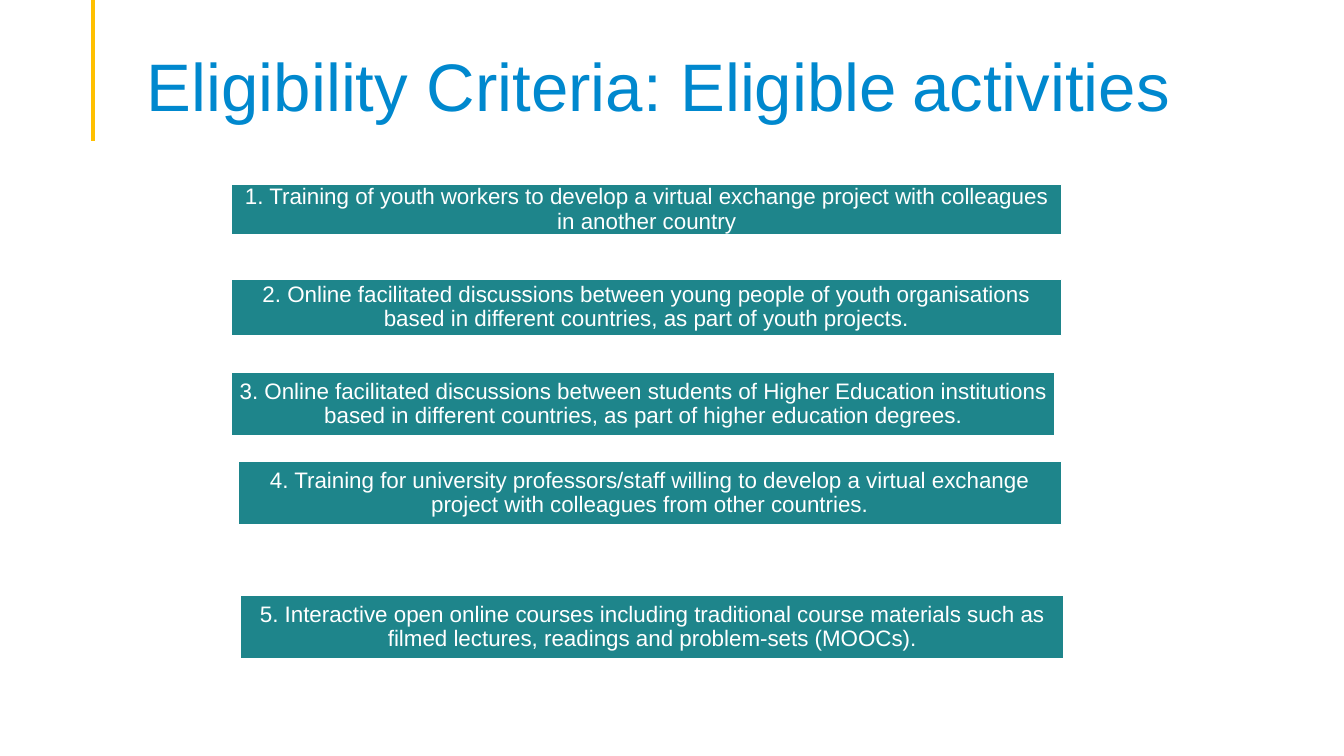
from dataclasses import dataclass

from lxml.etree import SubElement
from pptx import Presentation
from pptx.dml.color import RGBColor
from pptx.enum.shapes import MSO_CONNECTOR, MSO_SHAPE
from pptx.enum.text import MSO_ANCHOR, MSO_AUTO_SIZE, PP_ALIGN
from pptx.oxml.ns import qn
from pptx.slide import Slide
from pptx.util import Pt


@dataclass(frozen=True)
class Theme:
    font: str = "Arial"
    title_color: RGBColor = RGBColor(0x00, 0x88, 0xCE)
    space_color: RGBColor = RGBColor(0x40, 0x40, 0x40)
    accent: RGBColor = RGBColor(0xFF, 0xC0, 0x00)
    box_fill: RGBColor = RGBColor(0x1E, 0x85, 0x8B)
    white: RGBColor = RGBColor(0xFF, 0xFF, 0xFF)
    title_size: float = 48
    space_size: float = 37.3
    body_size: float = 16


@dataclass(frozen=True)
class Activity:
    text: str
    left: float
    top: float
    width: float = 588.2
    height: float = 45.2


THEME = Theme()

TITLE_RUNS = [
    ("Eligibility Criteria: Eligible", THEME.title_size, THEME.title_color),
    (" ", THEME.space_size, THEME.space_color),
    ("activities", THEME.title_size, THEME.title_color),
]

ACTIVITIES = [
    Activity("Training of youth workers to develop a virtual exchange project "
             "with colleagues in another country", 165.6, 131.8, 592.6, 36),
    Activity("Online facilitated discussions between young people of youth organisations "
             "based in different countries, as part of youth projects.",
             165, 199.5, 593.3, 40.3),
    Activity("Online facilitated discussions between students of Higher Education institutions "
             "based in different countries, as part of higher education degrees.", 165.4, 266.2),
    Activity("Training for university professors/staff willing to develop a virtual exchange "
             "project with colleagues from other countries.", 170, 329.6),
    Activity("Interactive open online courses including traditional course materials such as "
             "filmed lectures, readings and problem-sets (MOOCs).", 171.9, 425.5),
]


def apply_format(target: object, values: dict[str, object]) -> None:
    for name, value in values.items():
        setattr(target, name, value)


def add_run(paragraph: object, text: str, size: float, color: RGBColor) -> None:
    run = paragraph.add_run()
    run.text = text
    apply_format(run.font, {"name": THEME.font, "size": Pt(size)})
    run.font.color.rgb = color


def add_accent_line(slide: Slide) -> None:
    line = slide.shapes.add_connector(MSO_CONNECTOR.STRAIGHT, Pt(66.5), Pt(0), Pt(66.5), Pt(100.8))
    apply_format(line.line, {"width": Pt(2.25)})
    line.line.color.rgb = THEME.accent
    SubElement(line.element.spPr, qn("a:effectLst"))


def add_title(slide: Slide) -> None:
    title = slide.shapes.add_textbox(Pt(97.9), Pt(28.1), Pt(752.4), Pt(65.5))
    apply_format(title.text_frame, {"word_wrap": False, "auto_size": MSO_AUTO_SIZE.SHAPE_TO_FIT_TEXT})
    for text, size, color in TITLE_RUNS:
        add_run(title.text_frame.paragraphs[0], text, size, color)


def add_activity(slide: Slide, number: int, activity: Activity) -> None:
    box = slide.shapes.add_shape(MSO_SHAPE.RECTANGLE, Pt(activity.left), Pt(activity.top),
                                 Pt(activity.width), Pt(activity.height))
    box.shadow.inherit = False
    box.fill.solid()
    box.fill.fore_color.rgb = THEME.box_fill
    box.line.color.rgb = THEME.white
    box.line.width = Pt(1)
    margins = {f"margin_{side}": Pt(5) for side in ("left", "top", "right", "bottom")}
    apply_format(box.text_frame, {"word_wrap": True, "vertical_anchor": MSO_ANCHOR.MIDDLE} | margins)
    paragraph = box.text_frame.paragraphs[0]
    apply_format(paragraph, {"alignment": PP_ALIGN.CENTER, "line_spacing": 0.9})
    add_run(paragraph, f"{number}. {activity.text}", THEME.body_size, THEME.white)


def main() -> None:
    presentation = Presentation()
    apply_format(presentation, {"slide_width": Pt(960), "slide_height": Pt(540)})
    slide = presentation.slides.add_slide(presentation.slide_layouts[6])
    add_accent_line(slide)
    add_title(slide)
    for number, activity in enumerate(ACTIVITIES, start=1):
        add_activity(slide, number, activity)
    presentation.save("out.pptx")


if __name__ == "__main__":
    main()
